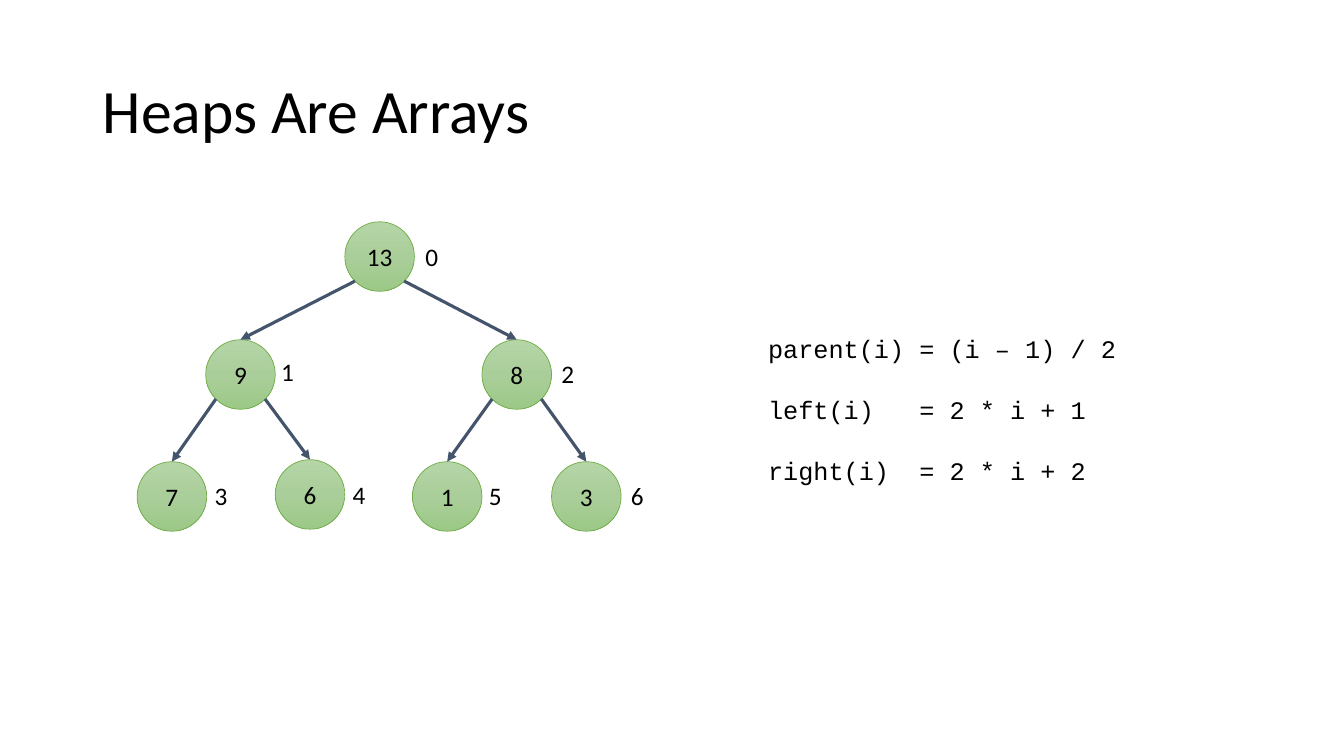
from copy import deepcopy
from math import sqrt

from pptx import Presentation
from pptx.dml.color import RGBColor
from pptx.enum.shapes import MSO_CONNECTOR as Connector, MSO_SHAPE as Shape
from pptx.enum.text import MSO_ANCHOR as Anchor, PP_ALIGN as Align
from pptx.oxml.ns import qn
from pptx.oxml.xmlchemy import OxmlElement
from pptx.util import Inches, Pt


def color(hex_string):
    return RGBColor.from_string(hex_string)


class HeapSlide:
    BODY, CODE = "Calibri", "Courier New"
    INK, EDGE, OUTLINE = "000000", "44546A", "70AD47"
    GREENS = ((0, "B5D5A7"), (0.5, "AACE9A"), (1, "9CC987"))
    DIAMETER = 0.69

    def __init__(self, slide):
        self.shapes = slide.shapes

    def add_run(self, paragraph, text, size=18, font=BODY):
        run = paragraph.add_run()
        run.text = text
        run.font.name = font
        run.font.size = Pt(size)
        run.font.color.rgb = color(self.INK)

    def text_box(self, left, top, width, height, wrap=True):
        box = self.shapes.add_textbox(*map(Inches, (left, top, width, height)))
        box.text_frame.word_wrap = wrap
        return box.text_frame

    def title(self, text):
        frame = self.text_box(0.92, 0.4, 11.5, 1.45)
        frame.vertical_anchor = Anchor.MIDDLE
        frame.paragraphs[0].line_spacing = 0.9
        self.add_run(frame.paragraphs[0], text, size=44)

    def node(self, value, left, top):
        circle = self.shapes.add_shape(
            Shape.OVAL, Inches(left), Inches(top),
            Inches(self.DIAMETER), Inches(self.DIAMETER))
        circle.shadow.inherit = False
        circle.line.color.rgb = color(self.OUTLINE)
        circle.line.width = Pt(0.5)

        # Vertical gradient with a third stop
        circle.fill.gradient()
        circle.fill.gradient_angle = 270
        stop_list = circle._element.spPr.find(".//" + qn("a:gsLst"))
        stop_list.append(deepcopy(stop_list[-1]))
        for stop, (position, green) in zip(circle.fill.gradient_stops, self.GREENS):
            stop.position = position
            stop.color.rgb = color(green)

        frame = circle.text_frame
        frame.vertical_anchor = Anchor.MIDDLE
        frame.paragraphs[0].alignment = Align.CENTER
        self.add_run(frame.paragraphs[0], str(value))
        return circle

    def edge(self, parent, child, side):
        """Arrow from the parent's lower diagonal (side -1 left, 1 right)."""
        radius = parent.width / 2
        reach = radius / sqrt(2)
        start_x = int(parent.left + radius + side * reach)
        start_y = int(parent.top + radius + reach)
        arrow = self.shapes.add_connector(
            Connector.STRAIGHT, start_x, start_y,
            child.left + child.width // 2, child.top)
        arrow.end_connect(child, 0)
        arrow.line.color.rgb = color(self.EDGE)
        arrow.line.width = Pt(2.25)
        tip = OxmlElement("a:tailEnd")
        tip.set("type", "triangle")
        arrow.line._get_or_add_ln().append(tip)
        arrow._element.spPr.append(OxmlElement("a:effectLst"))

    def index(self, number, left, top):
        frame = self.text_box(left, top, 0.33, 0.4, wrap=False)
        self.add_run(frame.paragraphs[0], str(number))

    def formulas(self, rows):
        frame = self.text_box(7.52, 3.26, 5.3, 1.62)
        for number, (name, formula) in enumerate(rows):
            paragraph = frame.add_paragraph() if number else frame.paragraphs[0]
            if number:
                paragraph.space_before = Pt(22)
            # Tab stop that lines up the equals signs
            tabs = OxmlElement("a:tabLst")
            tab = OxmlElement("a:tab")
            tab.set("pos", str(Inches(1.5)))
            tab.set("algn", "l")
            tabs.append(tab)
            paragraph._p.get_or_add_pPr().append(tabs)
            self.add_run(paragraph, f"{name}\t= {formula}", font=self.CODE)


# Heap in array order: value, node left and top, index left and top
HEAP = [
    (13, 3.42, 2.2, 4.12, 2.34),
    (9, 2.04, 3.37, 2.69, 3.49),
    (8, 4.78, 3.37, 5.47, 3.51),
    (7, 1.36, 4.58, 2.03, 4.72),
    (6, 2.73, 4.56, 3.4, 4.71),
    (1, 4.09, 4.58, 4.75, 4.72),
    (3, 5.47, 4.58, 6.16, 4.72),
]
FORMULAS = [
    ("parent(i)", "(i – 1) / 2"),
    ("left(i)", "2 * i + 1"),
    ("right(i)", "2 * i + 2"),
]


def main():
    deck = Presentation()
    deck.slide_width, deck.slide_height = Inches(13.33), Inches(7.5)
    heap = HeapSlide(deck.slides.add_slide(deck.slide_layouts[6]))

    heap.title("Heaps Are Arrays")

    # Tree nodes, then arrows from each parent
    nodes = [heap.node(value, left, top) for value, left, top, _, _ in HEAP]
    for i in range(1, len(nodes)):
        heap.edge(nodes[(i - 1) // 2], nodes[i], -1 if i % 2 else 1)

    # Array indices beside the nodes
    for i, (_, _, _, left, top) in enumerate(HEAP):
        heap.index(i, left, top)

    heap.formulas(FORMULAS)
    deck.save("out.pptx")


if __name__ == "__main__":
    main()
